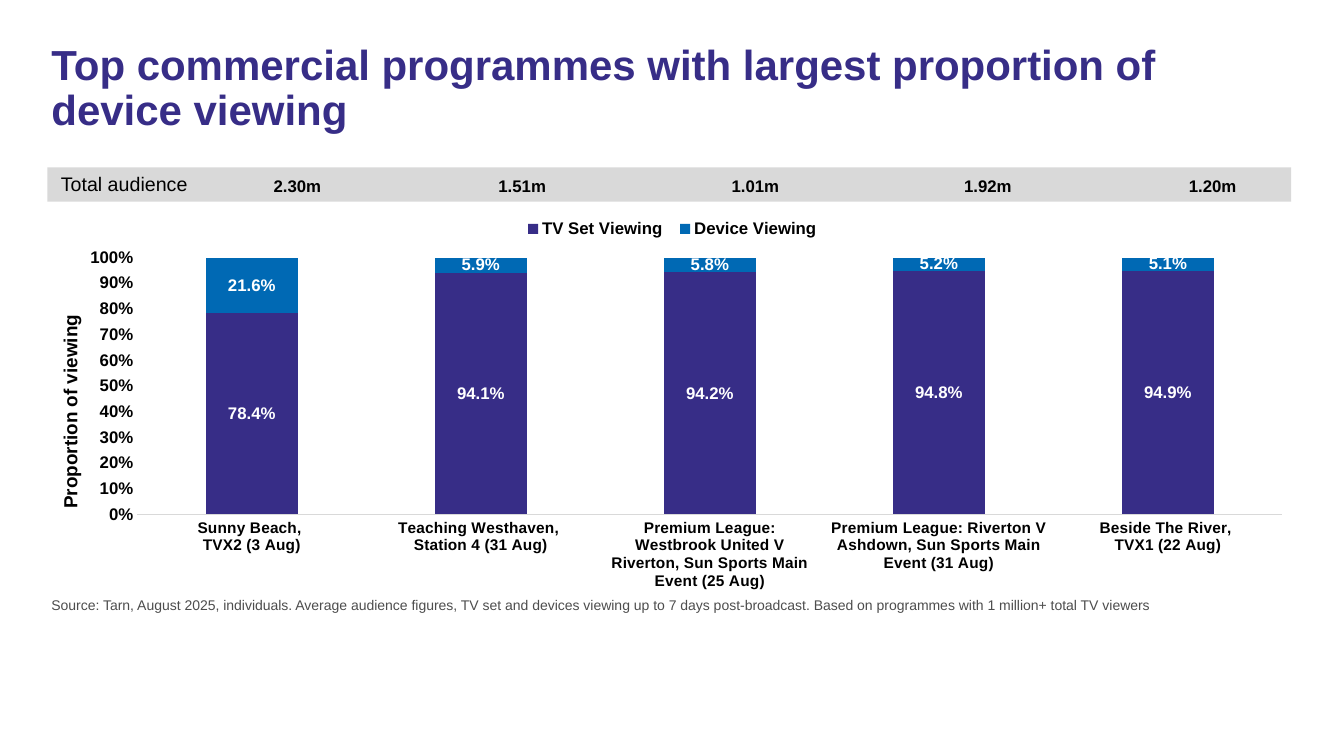
"""Builds a slide on the share of device viewing among top programmes."""
import pptx
import pptx.util
import pptx.chart.data
import pptx.dml.color
import pptx.enum.chart
import pptx.enum.shapes
import pptx.enum.text
import pptx.oxml
import pptx.oxml.ns

Pt = pptx.util.Pt
RGBColor = pptx.dml.color.RGBColor
Align = pptx.enum.text.PP_ALIGN
qn = pptx.oxml.ns.qn

PURPLE = RGBColor(0x37, 0x2D, 0x87)
BLUE = RGBColor(0x00, 0x69, 0xB4)
BLACK = RGBColor(0, 0, 0)
WHITE = RGBColor(0xFF, 0xFF, 0xFF)
GREY = RGBColor(0xD9, 0xD9, 0xD9)
SLATE = RGBColor(0x4D, 0x4D, 0x4D)

SHOWS = [
    "Sunny Beach, \nTVX2 (3 Aug)",
    "Teaching Westhaven, \nStation 4 (31 Aug)",
    "Premium League: Westbrook United V Riverton, Sun Sports Main Event (25 Aug)",
    "Premium League: Riverton V Ashdown, Sun Sports Main Event (31 Aug)",
    "Beside The River, \nTVX1 (22 Aug)",
]
SHARES = [
    ("TV Set Viewing", PURPLE, [0.784, 0.941, 0.942, 0.948, 0.949]),
    ("Device Viewing", BLUE, [0.216, 0.059, 0.058, 0.052, 0.051]),
]
TOTALS = [("2.30m", 178.2), ("1.51m", 338.8), ("1.01m", 505.4),
          ("1.92m", 671.4), ("1.20m", 832)]


def style(font, size, color=BLACK, bold=True):
    font.name, font.size, font.bold = "Arial", Pt(size), bold
    font.color.rgb = color


def write(frame, text, size=12, color=BLACK, bold=True, align=Align.LEFT, lead=1):
    frame.word_wrap = True
    frame.auto_size = pptx.enum.text.MSO_AUTO_SIZE.NONE
    frame.vertical_anchor = pptx.enum.text.MSO_ANCHOR.TOP
    para = frame.paragraphs[0]
    para.alignment, para.line_spacing = align, lead
    para.space_before = Pt(0)
    run = para.add_run()
    run.text = text
    style(run.font, size, color, bold)
    return para


def layout(node, inner=False, **spots):
    old = node.find(qn("c:layout"))
    if old is not None:
        node.remove(old)
    modes = "".join(f'<c:{key}Mode val="edge"/>' for key in "xy")
    sizes = "".join(f'<c:{key} val="{val}"/>' for key, val in spots.items())
    target = '<c:layoutTarget val="inner"/>' if inner else ""
    new = pptx.oxml.parse_xml(
        f'<c:layout {pptx.oxml.ns.nsdecls("c")}><c:manualLayout>'
        f"{target}{modes}{sizes}</c:manualLayout></c:layout>")
    after = node.find(qn("c:overlay"))
    if after is None:
        node.insert(0, new)
    else:
        after.addprevious(new)


class Deck:
    def __init__(self):
        self.show = pptx.Presentation()
        self.show.slide_width, self.show.slide_height = Pt(960), Pt(540)
        self.slide = self.show.slides.add_slide(self.show.slide_layouts[1])

    def holder(self, index, box, text, **form):
        shape = self.slide.placeholders[index]
        shape.left, shape.top, shape.width, shape.height = map(Pt, box)
        return write(shape.text_frame, text, **form)

    def source(self, box, text, **form):
        props = self.holder(1, box, text, **form)._p.get_or_add_pPr()
        props.set("marL", "0")
        props.set("indent", "0")
        props.append(pptx.oxml.parse_xml(f'<a:buNone {pptx.oxml.ns.nsdecls("a")}/>'))

    def label(self, box, text, **form):
        write(self.slide.shapes.add_textbox(*map(Pt, box)).text_frame, text, **form)

    def band(self, box):
        kind = pptx.enum.shapes.MSO_SHAPE.RECTANGLE
        shape = self.slide.shapes.add_shape(kind, *map(Pt, box))
        shape.shadow.inherit = False
        shape.fill.solid()
        shape.fill.fore_color.rgb = GREY
        shape.line.fill.background()

    def chart(self, box):
        data = pptx.chart.data.CategoryChartData(number_format="0.0%")
        data.categories = SHOWS
        for name, _, vals in SHARES:
            data.add_series(name, vals)
        kind = pptx.enum.chart.XL_CHART_TYPE.COLUMN_STACKED_100
        chart = self.slide.shapes.add_chart(kind, *map(Pt, box), data).chart
        style(chart.font, 10, bold=False)
        chart.has_title = False
        root = chart._chartSpace
        root.find(qn("c:chart")).addnext(pptx.oxml.parse_xml(
            f'<c:spPr {pptx.oxml.ns.nsdecls("c", "a")}><a:noFill/>'
            "<a:ln><a:noFill/></a:ln></c:spPr>"))
        layout(root.find(".//" + qn("c:plotArea")), inner=True,
               x=0.072, y=0.249, w=0.916, h=0.531)
        self.bars(chart.plots[0])
        self.axes(chart)
        self.legend(chart)

    def bars(self, plot):
        plot.gap_width, plot.overlap, plot.vary_by_categories = 150, 100, False
        for series, (_, color, _) in zip(plot.series, SHARES):
            series.format.fill.solid()
            series.format.fill.fore_color.rgb = color
            labels = series.data_labels
            labels.show_value = True
            labels.number_format = "0.0%"
            labels.number_format_is_linked = False
            style(labels.font, 12, WHITE)

    def axes(self, chart):
        cat, val = chart.category_axis, chart.value_axis
        for axis, size in ((cat, 11), (val, 12)):
            axis.major_tick_mark = pptx.enum.chart.XL_TICK_MARK.NONE
            axis.has_major_gridlines = False
            style(axis.tick_labels.font, size)
        cat.format.line.color.rgb = GREY
        cat.format.line.width = Pt(0.75)
        val.format.line.fill.background()
        val.minimum_scale, val.maximum_scale, val.major_unit = 0, 1, 0.1
        val.tick_labels.number_format = "0%"
        val.tick_labels.number_format_is_linked = False
        title = val.axis_title
        run = title.text_frame.paragraphs[0].add_run()
        run.text = "Proportion of viewing"
        style(run.font, 13.5)
        layout(title._element, x=0.006, y=0.36)

    def legend(self, chart):
        chart.has_legend = True
        legend = chart.legend
        legend.position = pptx.enum.chart.XL_LEGEND_POSITION.BOTTOM
        legend.include_in_layout = False
        style(legend.font, 12)
        layout(legend._element, x=0.375, y=0.16, w=0.25, h=0.06)


def main():
    deck = Deck()
    deck.holder(0, (29.5, 28, 893, 80.6),
                "Top commercial programmes with largest proportion of device viewing",
                size=30, color=PURPLE, lead=0.9)
    deck.band((33.8, 119.5, 888.5, 24.5))
    deck.chart((33.8, 97.9, 893, 345.6))
    deck.label((11.5, 119.5, 129.6, 24.5), "Total audience",
               size=14, bold=False, align=Align.RIGHT)
    for text, left in TOTALS:
        deck.label((left, 121.7, 68.4, 21.6), text, align=Align.CENTER)
    deck.source((29.5, 422.6, 893, 23.8),
                "Source: Tarn, August 2025, individuals. Average audience figures, "
                "TV set and devices viewing up to 7 days post-broadcast. "
                "Based on programmes with 1 million+ total TV viewers",
                size=10, color=SLATE, bold=False)
    deck.show.save("out.pptx")


if __name__ == "__main__":
    main()
